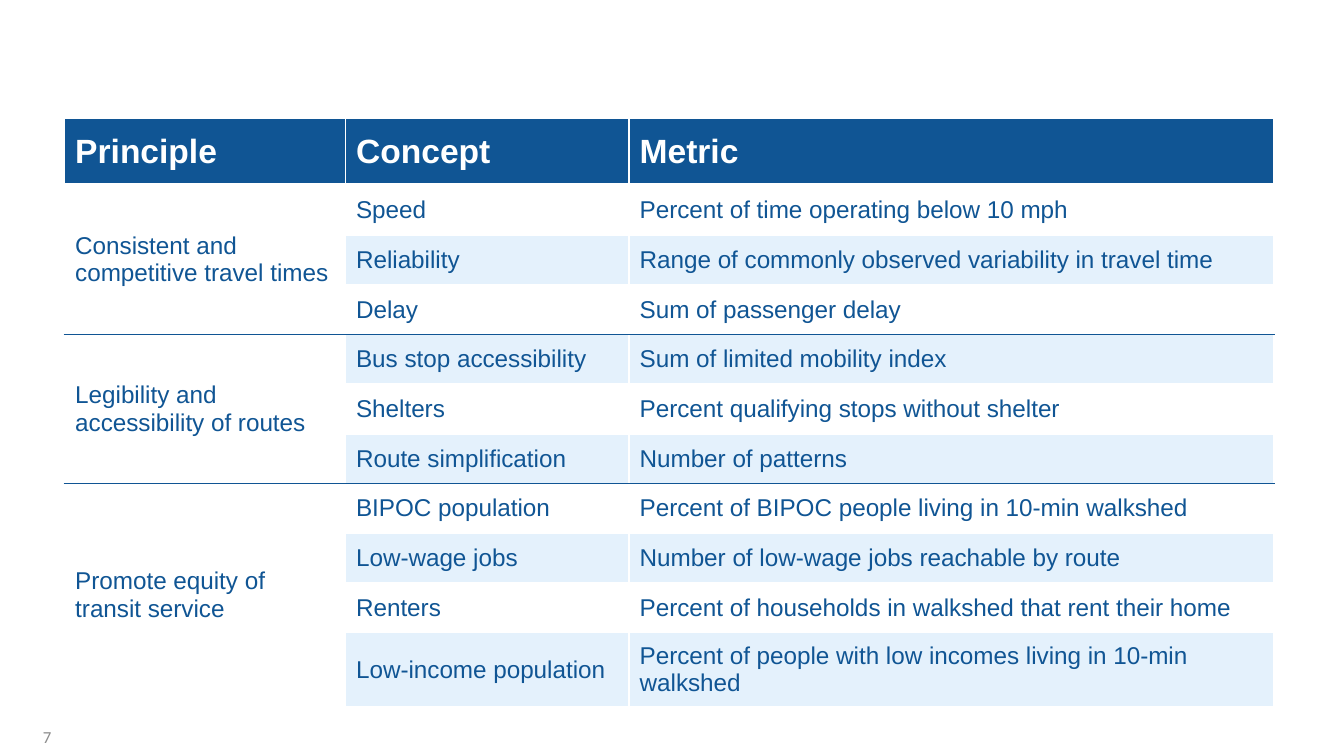
from lxml import etree
from pptx import Presentation
from pptx.dml.color import RGBColor
from pptx.enum import text
from pptx.oxml import ns
from pptx.util import Inches, Pt

NAVY = RGBColor(0x10, 0x55, 0x94)
PALE = RGBColor(0xE4, 0xF1, 0xFC)
WHITE = RGBColor(0xFF, 0xFF, 0xFF)
GREY = RGBColor(0x8C, 0x8C, 0x8C)

HEADERS = ["Principle", "Concept", "Metric"]
GROUPS = [
    ("Consistent and competitive travel times", [
        ("Speed", "Percent of time operating below 10 mph"),
        ("Reliability", "Range of commonly observed variability in travel time"),
        ("Delay", "Sum of passenger delay"),
    ]),
    ("Legibility and accessibility of routes", [
        ("Bus stop accessibility", "Sum of limited mobility index"),
        ("Shelters", "Percent qualifying stops without shelter"),
        ("Route simplification", "Number of patterns"),
    ]),
    ("Promote equity of transit service", [
        ("BIPOC population", "Percent of BIPOC people living in 10-min walkshed"),
        ("Low-wage jobs", "Number of low-wage jobs reachable by route"),
        ("Renters", "Percent of households in walkshed that rent their home"),
        ("Low-income population",
         "Percent of people with low incomes living in 10-min walkshed"),
    ]),
]
COL_WIDTHS = [2.09, 2.11, 4.8]
ROW_HEIGHTS = [0.5] + [0.37] * 9 + [0.55]


def write(tf, content, font="Arial", size=13, color=NAVY, bold=False, align=None):
    p = tf.paragraphs[0]
    p.alignment = align
    r = p.add_run()
    r.text = content
    r.font.name, r.font.size, r.font.bold = font, Pt(size), bold
    r.font.color.rgb = color


def style_cell(cell, fill=None, top=WHITE, bottom=WHITE, bottom_width=1):
    cell.margin_left = cell.margin_right = Inches(0.08)
    cell.margin_top = cell.margin_bottom = 0
    cell.vertical_anchor = text.MSO_ANCHOR.MIDDLE
    # Borders come before the fill in the cell properties
    tc_pr = cell._tc.get_or_add_tcPr()
    for side, color, width in (("L", WHITE, 1), ("R", WHITE, 1),
                               ("T", top, 1), ("B", bottom, bottom_width)):
        ln = etree.SubElement(tc_pr, ns.qn(f"a:ln{side}"), w=str(Pt(width)))
        solid = etree.SubElement(ln, ns.qn("a:solidFill"))
        etree.SubElement(solid, ns.qn("a:srgbClr"), val=str(color))
    if fill is None:
        cell.fill.background()
    else:
        cell.fill.solid()
        cell.fill.fore_color.rgb = fill


def add_metrics_table(s, x, y):
    table = s.shapes.add_table(
        len(ROW_HEIGHTS), len(COL_WIDTHS), Inches(x), Inches(y),
        Inches(sum(COL_WIDTHS)), Inches(sum(ROW_HEIGHTS))).table
    table.first_row = table.horz_banding = False
    for col, width in zip(table.columns, COL_WIDTHS):
        col.width = Inches(width)
    for row, height in zip(table.rows, ROW_HEIGHTS):
        row.height = Inches(height)

    # Header row
    for c, header in enumerate(HEADERS):
        cell = table.cell(0, c)
        style_cell(cell, NAVY, bottom_width=3)
        write(cell.text_frame, header, size=18, color=WHITE, bold=True)

    # One group per principle, ruled off from the next
    first = 1
    for principle, rows in GROUPS:
        last = first + len(rows) - 1
        for r, pair in enumerate(rows, first):
            top = NAVY if r == first and r > 1 else WHITE
            bottom = NAVY if r == last and r < len(ROW_HEIGHTS) - 1 else WHITE
            style_cell(table.cell(r, 0), None, top, bottom)
            for c, content in enumerate(pair, 1):
                cell = table.cell(r, c)
                style_cell(cell, PALE if r % 2 == 0 else None, top, bottom)
                write(cell.text_frame, content)
        table.cell(first, 0).merge(table.cell(last, 0))
        write(table.cell(first, 0).text_frame, principle)
        first = last + 1


def add_page_number(s, x, y, w, h, number):
    tf = s.shapes.add_textbox(Inches(x), Inches(y), Inches(w), Inches(h)).text_frame
    tf.word_wrap = True
    tf.vertical_anchor = text.MSO_ANCHOR.MIDDLE
    write(tf, number, font="Calibri", size=9, color=GREY, align=text.PP_ALIGN.RIGHT)


def main():
    prs = Presentation()
    # 16:9 page
    prs.slide_width, prs.slide_height = Inches(10), Inches(10 * 9 / 16)
    s = prs.slides.add_slide(prs.slide_layouts[6])
    add_metrics_table(s, 0.48, 0.88)
    add_page_number(s, 0, 5.33, 0.48, 0.3, "7")
    prs.save("out.pptx")


if __name__ == "__main__":
    main()
